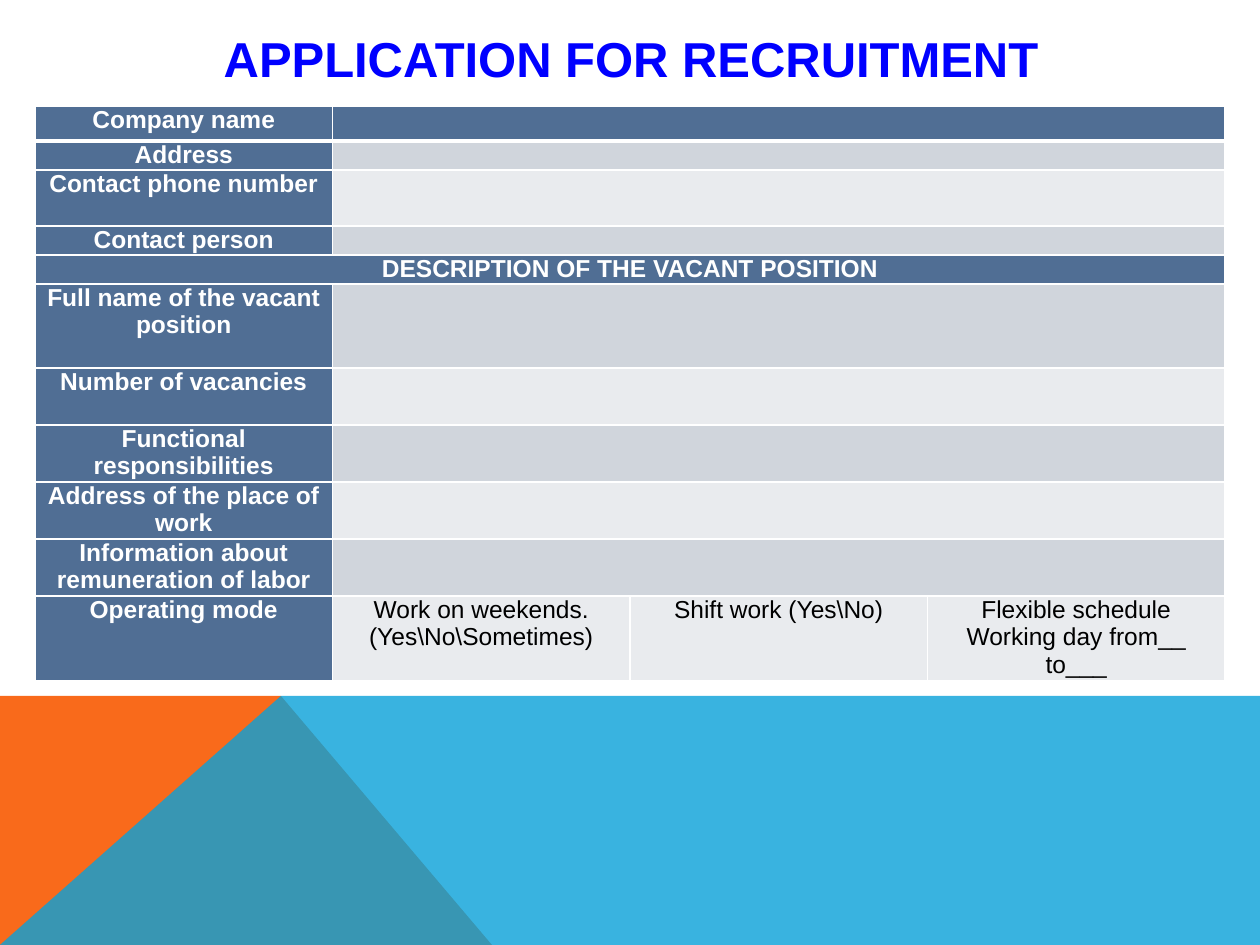
from lxml import etree
from pptx import Presentation
from pptx.dml.color import RGBColor
from pptx.enum.text import MSO_ANCHOR, PP_ALIGN
from pptx.oxml.ns import qn
from pptx.util import Emu, Pt

CENTER = PP_ALIGN.CENTER
MIDDLE, TOP = MSO_ANCHOR.MIDDLE, MSO_ANCHOR.TOP

# Content: label, row height in px, answers
TITLE = "APPLICATION FOR RECRUITMENT"
ROWS = [
    ("Company name", 35, []),
    ("Address", 29, []),
    ("Contact phone number", 56, []),
    ("Contact person", 29, []),
    ("DESCRIPTION OF THE VACANT POSITION", 29, None),
    ("Full name of the vacant position", 84, []),
    ("Number of vacancies", 57, []),
    ("Functional responsibilities", 57, []),
    ("Address of the place of work", 57, []),
    ("Information about remuneration of labor", 57, []),
    ("Operating mode", 85, [
        "Work on weekends. (Yes\\No\\Sometimes)",
        "Shift work (Yes\\No)",
        "Flexible schedule\nWorking day from__ to___",
    ]),
]
THEME = {
    "font": "Arial", "title_size": 28, "size": 14,
    "title": "0000FF", "head": "506E94", "light": "FFFFFF", "dark": "000000",
    "bands": ("E9EBEE", "D0D5DC"), "orange": "F96A1B", "blue": "08A1D9",
}
COLS, COL_W = 4, 297.5
LEFT, HEAD_TOP = 35, 106
WIDE, HIGH = 1260, 945
PEAK = (281, 696)
ORANGE = [(0, HIGH), (0, PEAK[1]), PEAK, (492, HIGH)]
BLUE = [(0, HIGH), PEAK, (WIDE, PEAK[1]), (WIDE, HIGH)]


def px(n):
    return Emu(round(n * 914400 / 126))


def rgb(name):
    return RGBColor.from_string(THEME.get(name, name))


def set_font(par, size, color, bold):
    par.alignment = CENTER
    font = par.font
    font.name, font.size, font.bold = THEME["font"], Pt(size), bold
    font.color.rgb = rgb(color)


def add_area(slide, points, color, alpha=None):
    pen = slide.shapes.build_freeform(*points[0], scale=914400 / 126)
    pen.add_line_segments(points[1:], close=True)
    area = pen.convert_to_shape()
    area.shadow.inherit = False
    area.line.fill.background()
    area.fill.solid()
    area.fill.fore_color.rgb = rgb(color)
    if alpha:
        tint = area.fill._xPr.find(".//" + qn("a:srgbClr"))
        etree.SubElement(tint, qn("a:alpha"), val=str(alpha * 1000))


def set_cell(cell, text, fill, color, bold, row):
    cell.text = text
    cell.margin_left = cell.margin_right = px(8)
    cell.margin_top = cell.margin_bottom = 0
    cell.vertical_anchor = TOP
    for par in cell.text_frame.paragraphs:
        set_font(par, THEME["size"], color, bold)
        etree.SubElement(par._p, qn("a:endParaRPr"), sz=str(THEME["size"] * 100))
    # White borders, thicker under the first row
    props = cell._tc.get_or_add_tcPr()
    for side in "LRTB":
        thick = (row, side) in ((0, "B"), (1, "T"))
        line = etree.SubElement(props, qn("a:ln" + side), w=str(Pt(3 if thick else 1)))
        paint = etree.SubElement(line, qn("a:solidFill"))
        etree.SubElement(paint, qn("a:srgbClr"), val=THEME["light"])
    cell.fill.solid()
    cell.fill.fore_color.rgb = rgb(fill)


def add_form(slide):
    high = sum(row[1] for row in ROWS)
    table = slide.shapes.add_table(
        len(ROWS), COLS, px(LEFT), px(HEAD_TOP), px(COLS * COL_W), px(high)).table
    for col in table.columns:
        col.width = px(COL_W)
    for r, (label, tall, answers) in enumerate(ROWS):
        table.rows[r].height = px(tall)
        texts = [label] + (answers or [""] * (COLS - 1))
        for c, text in enumerate(texts):
            head = c == 0 or r == 0 or answers is None
            fill = "head" if head else THEME["bands"][r % 2]
            set_cell(table.cell(r, c), text, fill, "light" if head else "dark", head, r)
        if not answers:
            start = 0 if answers is None else 1
            table.cell(r, start).merge(table.cell(r, COLS - 1))


def main():
    deck = Presentation()
    deck.slide_width, deck.slide_height = px(WIDE), px(HIGH)
    slide = deck.slides.add_slide(deck.slide_layouts[5])

    # Backdrop, kept behind the title
    add_area(slide, ORANGE, "orange")
    add_area(slide, BLUE, "blue", 80)

    # Title
    title = slide.shapes.title
    title.left, title.top, title.width, title.height = map(px, (113, 20, 1036, 76))
    title.text_frame.text = TITLE
    title.text_frame.vertical_anchor = MIDDLE
    set_font(title.text_frame.paragraphs[0], THEME["title_size"], "title", True)

    add_form(slide)
    deck.save("out.pptx")


if __name__ == "__main__":
    main()
